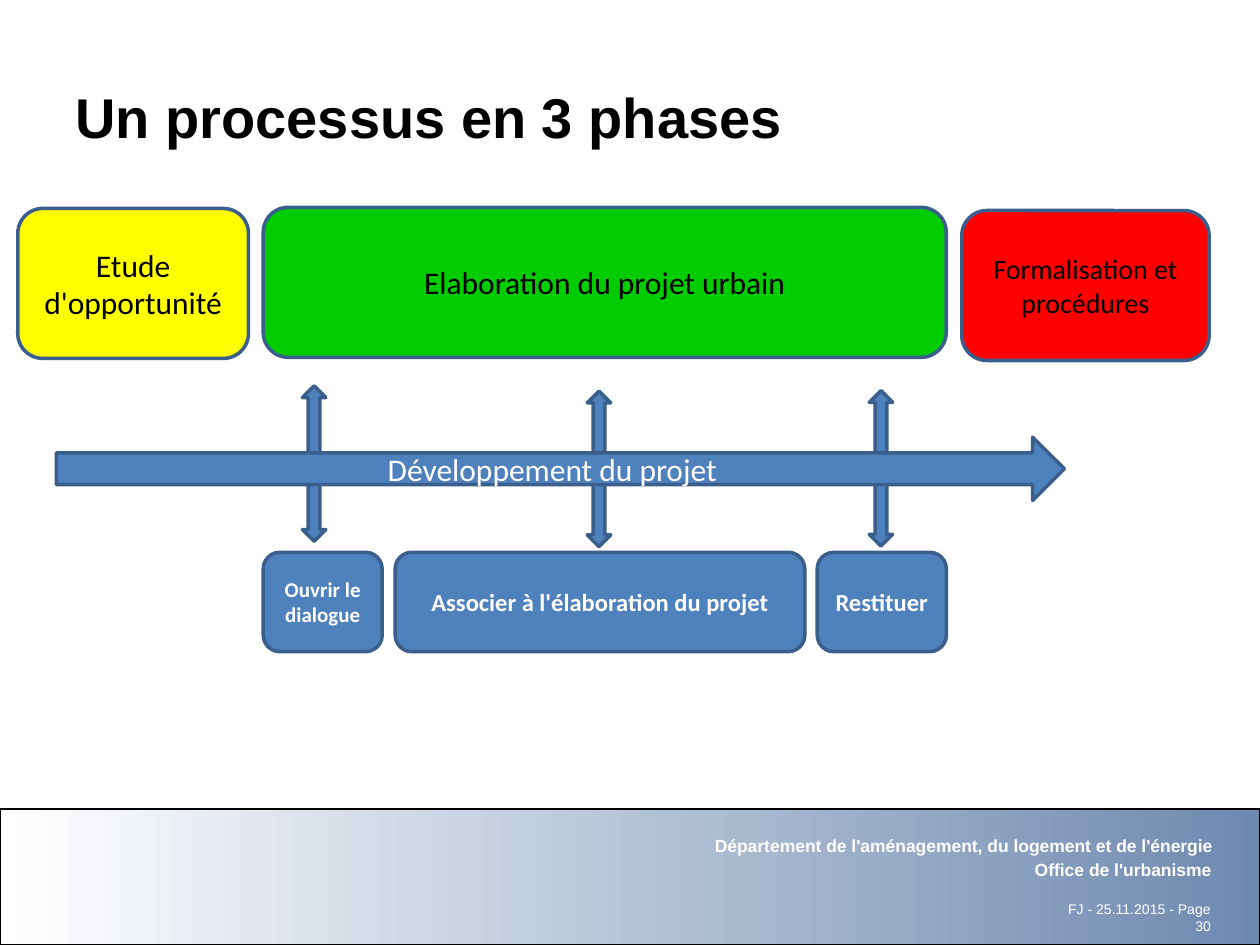
from pptx import Presentation
from pptx.dml.color import RGBColor
from pptx.enum.shapes import MSO_SHAPE
from pptx.enum.text import MSO_ANCHOR, PP_ALIGN
from pptx.util import Pt

RECTANGLE = MSO_SHAPE.RECTANGLE
ROUNDED = MSO_SHAPE.ROUNDED_RECTANGLE
RIGHT_ARROW = MSO_SHAPE.RIGHT_ARROW
DOUBLE_ARROW = MSO_SHAPE.LEFT_RIGHT_ARROW
LEFT, CENTER, RIGHT = PP_ALIGN.LEFT, PP_ALIGN.CENTER, PP_ALIGN.RIGHT
TOP, MIDDLE = MSO_ANCHOR.TOP, MSO_ANCHOR.MIDDLE

BLUE, OUTLINE = "4F81BD", "3A5F8C"
GREEN, RED, YELLOW = "00CC00", "FF0000", "FFFF00"
BLACK, WHITE, FOOTER_BLUE = "000000", "FFFFFF", "6E89B0"


def color(value):
    return RGBColor.from_string(value)


def write(box, text, size, font, ink, bold=False, align=CENTER, anchor=MIDDLE):
    frame = box.text_frame
    frame.word_wrap = True
    frame.vertical_anchor = anchor
    para = frame.paragraphs[0]
    para.alignment = align
    span = para.add_run()
    span.text = text
    span.font.size = Pt(size)
    span.font.name = font
    span.font.bold = bold
    span.font.color.rgb = color(ink)


def add_label(page, left, top, width, height, text, size, ink, **style):
    box = page.shapes.add_textbox(Pt(left), Pt(top), Pt(width), Pt(height))
    write(box, text, size, "Arial", ink, **style)


def add_block(page, kind, left, top, width, height, fill=BLUE):
    shape = page.shapes.add_shape(kind, Pt(left), Pt(top), Pt(width), Pt(height))
    shape.shadow.inherit = False
    shape.fill.solid()
    shape.fill.fore_color.rgb = color(fill)
    shape.line.color.rgb = color(OUTLINE)
    shape.line.width = Pt(2)
    return shape


def add_footer(page, left, top, width, height):
    band = page.shapes.add_shape(RECTANGLE, Pt(left), Pt(top), Pt(width), Pt(height))
    band.shadow.inherit = False
    band.fill.gradient()
    band.fill.gradient_angle = 0
    for stop, tint in zip(band.fill.gradient_stops, (WHITE, FOOTER_BLUE)):
        stop.color.rgb = color(tint)
    band.line.color.rgb = color(BLACK)
    band.line.width = Pt(1)
    lines = [
        (109.4, 11.5, 590.4, 8.6, "Département de l'aménagement, du logement et de l'énergie", 10, True),
        (110.2, 25.2, 589, 8, "Office de l'urbanisme", 10, True),
        (600.5, 49, 98.6, 26.6, "FJ - 25.11.2015 - Page 30", 8, False),
    ]
    for x, y, line_width, line_height, text, size, bold in lines:
        add_label(page, left + x, top + y, line_width, line_height, text, size, WHITE,
                  bold=bold, align=RIGHT, anchor=TOP)


def add_phases(page, left, top, height):
    phases = [
        (0, 0.6, 131.8, YELLOW, "Etude d'opportunité", 18),
        (140.2, 0, 390.3, GREEN, "Elaboration du projet urbain", 18),
        (539.4, 1.8, 141.3, RED, "Formalisation et procédures", 16),
    ]
    for x, y, width, fill, text, size in phases:
        phase = add_block(page, ROUNDED, left + x, top + y, width, height, fill)
        write(phase, text, size, "Calibri", BLACK)


def add_steps(page, left, top, height):
    steps = [
        (0, 68, "Ouvrir le dialogue", 12),
        (75.4, 234.1, "Associer à l'élaboration du projet", 14),
        (316.6, 73.8, "Restituer", 14),
    ]
    for x, width, text, size in steps:
        step = add_block(page, ROUNDED, left + x, top, width, height)
        write(step, text, size, "Calibri", WHITE, bold=True)


def add_development(page, left, top, width, height):
    length, thickness = 88.8, 13.4
    for x, y in ((147.3, -3), (310.1, 0), (471.2, -0.3)):
        link = add_block(page, DOUBLE_ARROW, left + x - length / 2,
                         top + height / 2 + y - thickness / 2, length, thickness)
        link.rotation = 270
    arrow = add_block(page, RIGHT_ARROW, left, top, width, height)
    write(arrow, "Développement du projet", 18, "Calibri", WHITE)


def main():
    deck = Presentation()
    deck.slide_width, deck.slide_height = Pt(720), Pt(540)
    page = deck.slides.add_slide(deck.slide_layouts[6])
    add_footer(page, 0, 462.2, 720, 77.8)
    add_label(page, 36, 21.6, 648, 90, "Un processus en 3 phases", 32, BLACK,
              bold=True, align=LEFT)
    add_phases(page, 10.2, 118.5, 85.7)
    add_steps(page, 150.4, 315.6, 56.8)
    add_development(page, 32.2, 249.8, 576, 36.2)
    deck.save("out.pptx")


if __name__ == "__main__":
    main()
